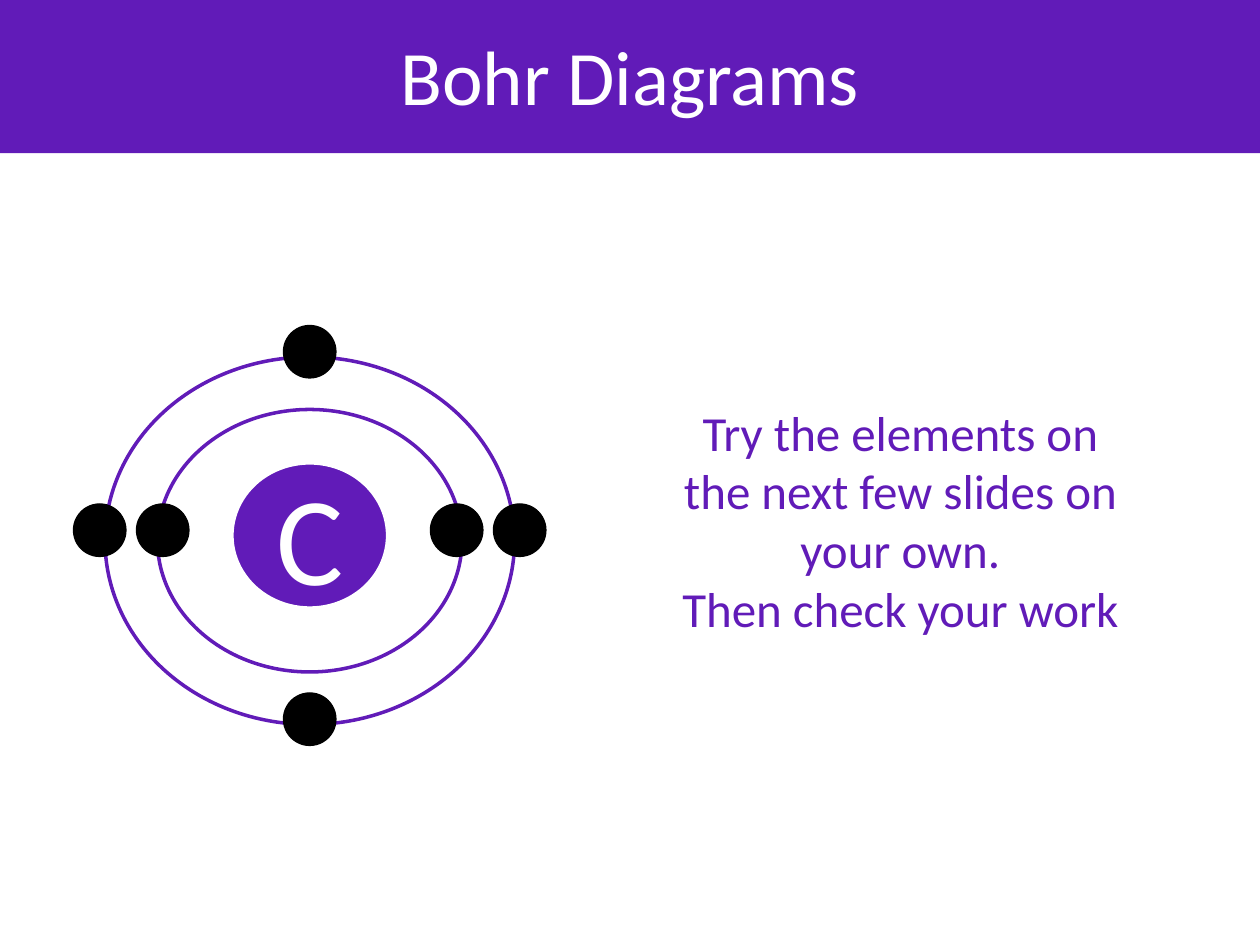
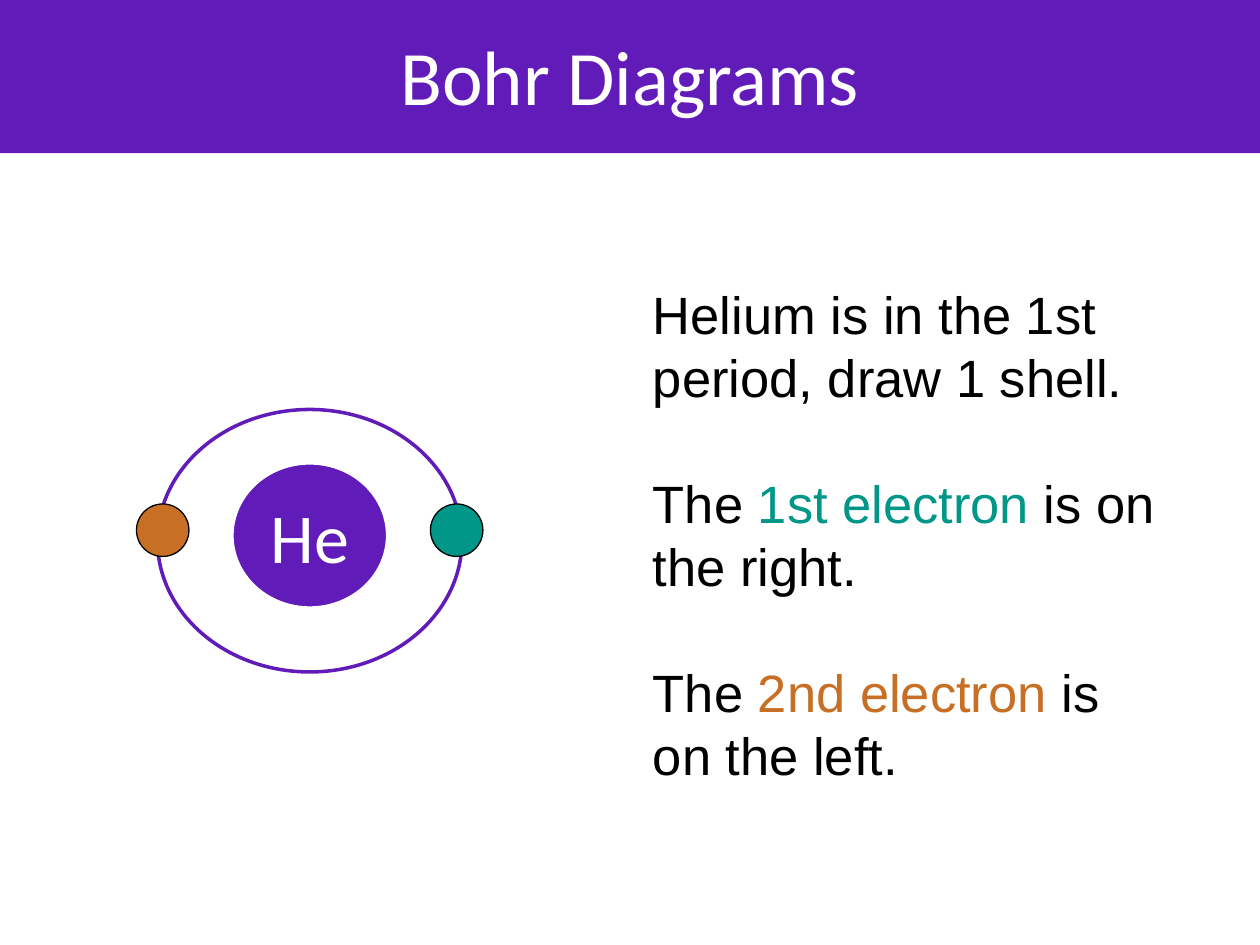
from dataclasses import dataclass
from typing import Optional

from pptx import Presentation
from pptx.dml.color import RGBColor
from pptx.enum.shapes import MSO_SHAPE
from pptx.enum.text import MSO_ANCHOR, MSO_AUTO_SIZE, PP_ALIGN
from pptx.util import Emu, Pt

# Shared look
EMU_PER_PX = 7620  # 120 px to the inch
PURPLE = RGBColor(0x61, 0x1B, 0xB8)
TEAL = RGBColor(0x00, 0x96, 0x88)
ORANGE = RGBColor(0xC7, 0x70, 0x25)
WHITE = RGBColor(0xFF, 0xFF, 0xFF)
BLACK = RGBColor(0x00, 0x00, 0x00)
HEADING_FONT = "Calibri"
BODY_FONT = "Arial"
LINE_HEIGHT = 1.2  # line pitch as a multiple of the text size


@dataclass(frozen=True)
class Box:
    left: int
    top: int
    width: int
    height: int

    def emu(self) -> list[Emu]:
        return [Emu(length * EMU_PER_PX)
                for length in (self.left, self.top, self.width, self.height)]


@dataclass(frozen=True)
class TextStyle:
    font: str
    size: int
    color: RGBColor
    align: PP_ALIGN
    space_before: int = 0


@dataclass(frozen=True)
class TextRun:
    text: str
    color: Optional[RGBColor] = None


@dataclass(frozen=True)
class Electron:
    """An electron placed relative to the middle of the atom."""
    across: int
    down: int
    color: RGBColor = BLACK


# Atom geometry
ATOM_X, ATOM_Y = 295, 505
ELECTRON_SIZE = 50
OUTER_SHELL = Box(100, 340, 390, 350)
INNER_SHELL = Box(150, 390, 290, 250)
NUCLEUS = Box(220, 440, 150, 140)
INNER_RADIUS, OUTER_RADIUS = 140, 200

CARBON_ELECTRONS = [
    Electron(INNER_RADIUS, 0), Electron(-INNER_RADIUS, 0),
    Electron(OUTER_RADIUS, 0), Electron(0, -170),
    Electron(-OUTER_RADIUS, 0), Electron(0, 180),
]
HELIUM_ELECTRONS = [Electron(INNER_RADIUS, 0, TEAL),
                    Electron(-INNER_RADIUS, 0, ORANGE)]

# Text
TITLE_BAND = Box(0, -4, 1200, 150)
TITLE_STYLE = TextStyle(HEADING_FONT, 44, WHITE, PP_ALIGN.CENTER)
PROMPT_STYLE = TextStyle(HEADING_FONT, 28, PURPLE, PP_ALIGN.CENTER)
STEPS_STYLE = TextStyle(BODY_FONT, 30, BLACK, PP_ALIGN.LEFT, space_before=36)
PROMPT = [
    [TextRun("Try the elements on the next few slides on your own.")],
    [TextRun("Then check your work")],
]
HELIUM_STEPS = [
    [TextRun("Helium is in the 1st period, draw 1 shell.")],
    [TextRun("The "), TextRun("1st electron", TEAL), TextRun(" is on the right.")],
    [TextRun("The "), TextRun("2nd electron", ORANGE), TextRun(" is on the left.")],
]


def add_run(paragraph, text_run: TextRun, style: TextStyle) -> None:
    run = paragraph.add_run()
    run.text = text_run.text
    run.font.name = style.font
    run.font.size = Pt(style.size)
    run.font.color.rgb = text_run.color or style.color


def add_title(slide, text: str) -> None:
    title = slide.shapes.title
    title.left, title.top, title.width, title.height = TITLE_BAND.emu()
    title.fill.solid()
    title.fill.fore_color.rgb = PURPLE
    frame = title.text_frame
    frame.auto_size = MSO_AUTO_SIZE.NONE
    frame.vertical_anchor = MSO_ANCHOR.MIDDLE
    paragraph = frame.paragraphs[0]
    paragraph.alignment = TITLE_STYLE.align
    add_run(paragraph, TextRun(text), TITLE_STYLE)


def add_ellipse(slide, box: Box, fill: RGBColor, line: RGBColor, weight: float):
    shape = slide.shapes.add_shape(MSO_SHAPE.OVAL, *box.emu())
    shape.shadow.inherit = False
    shape.fill.solid()
    shape.fill.fore_color.rgb = fill
    shape.line.color.rgb = line
    shape.line.width = Pt(weight)
    return shape


def add_atom(slide, symbol: str, symbol_size: int, shells: list[Box],
             electrons: list[Electron]) -> None:
    for shell in shells:
        add_ellipse(slide, shell, WHITE, PURPLE, 2)

    nucleus = add_ellipse(slide, NUCLEUS, PURPLE, WHITE, 3)
    frame = nucleus.text_frame
    frame.word_wrap = False
    frame.vertical_anchor = MSO_ANCHOR.MIDDLE
    paragraph = frame.paragraphs[0]
    paragraph.alignment = PP_ALIGN.CENTER
    style = TextStyle(HEADING_FONT, symbol_size, WHITE, PP_ALIGN.CENTER)
    add_run(paragraph, TextRun(symbol), style)

    for electron in electrons:
        box = Box(ATOM_X + electron.across - ELECTRON_SIZE // 2,
                  ATOM_Y + electron.down - ELECTRON_SIZE // 2,
                  ELECTRON_SIZE, ELECTRON_SIZE)
        add_ellipse(slide, box, electron.color, BLACK, 0.75)


def add_text(slide, box: Box, paragraphs: list[list[TextRun]],
             style: TextStyle, anchor: MSO_ANCHOR) -> None:
    frame = slide.shapes.add_textbox(*box.emu()).text_frame
    frame.word_wrap = True
    frame.vertical_anchor = anchor
    if anchor == MSO_ANCHOR.TOP:
        frame.margin_top = frame.margin_bottom = Emu(12 * EMU_PER_PX)
    for index, text_runs in enumerate(paragraphs):
        paragraph = frame.add_paragraph() if index else frame.paragraphs[0]
        paragraph.alignment = style.align
        paragraph.line_spacing = Pt(style.size * LINE_HEIGHT)
        paragraph.space_before = Pt(style.space_before if index else 0)
        for text_run in text_runs:
            add_run(paragraph, text_run, style)


def main() -> None:
    presentation = Presentation()
    presentation.slide_width = Emu(1200 * EMU_PER_PX)
    presentation.slide_height = Emu(900 * EMU_PER_PX)
    title_only = presentation.slide_layouts[5]

    # Carbon example and prompt
    slide = presentation.slides.add_slide(title_only)
    add_title(slide, "Bohr Diagrams")
    add_atom(slide, "C", 72, [OUTER_SHELL, INNER_SHELL], CARBON_ELECTRONS)
    add_text(slide, Box(630, 250, 455, 490), PROMPT, PROMPT_STYLE, MSO_ANCHOR.MIDDLE)

    # Helium, step by step
    slide = presentation.slides.add_slide(title_only)
    add_title(slide, "Bohr Diagrams")
    add_atom(slide, "He", 40, [INNER_SHELL], HELIUM_ELECTRONS)
    add_text(slide, Box(610, 257, 504, 528), HELIUM_STEPS, STEPS_STYLE, MSO_ANCHOR.TOP)

    presentation.save("out.pptx")


if __name__ == "__main__":
    main()
